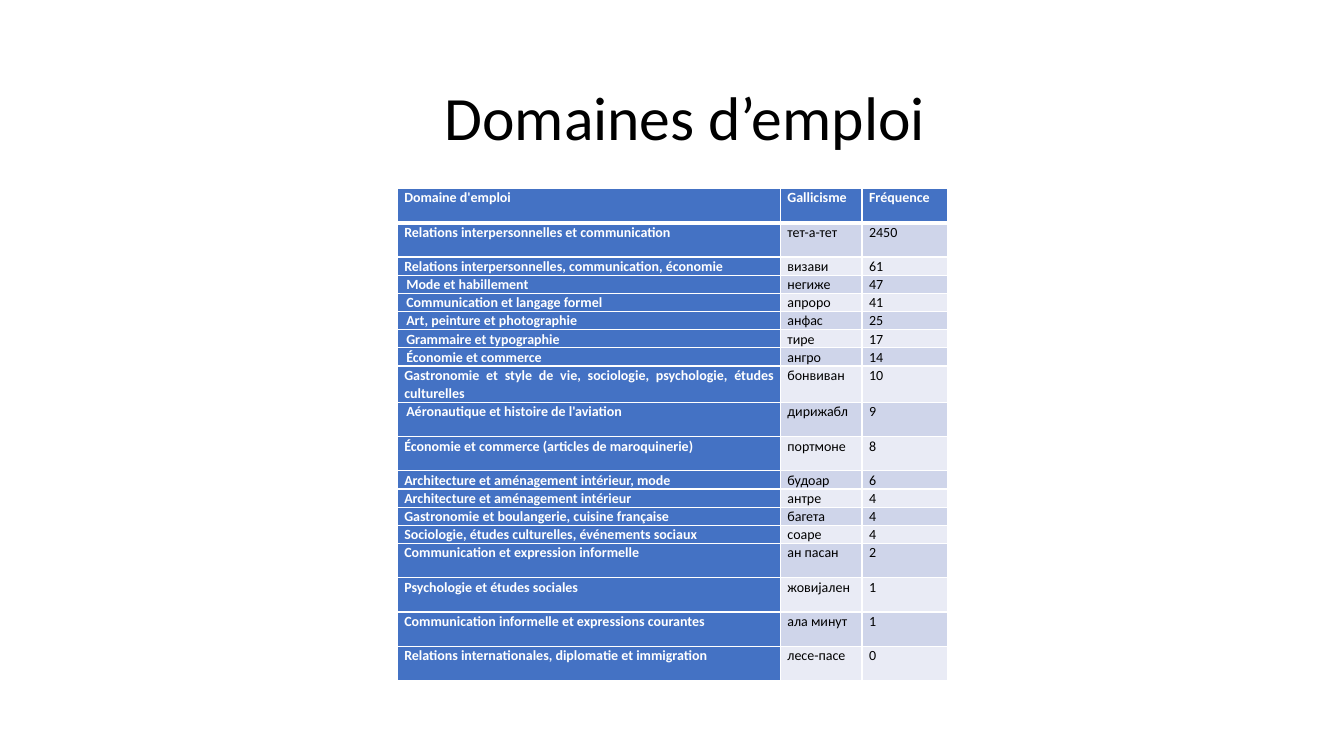
"""Build a slide with a table of Gallicisms, their domains of use and frequency."""
from lxml.etree import SubElement
from pptx import Presentation
from pptx.dml.color import RGBColor
from pptx.enum.text import MSO_ANCHOR, MSO_AUTO_SIZE, PP_ALIGN
from pptx.oxml.ns import qn
from pptx.util import Inches, Pt

WHITE = RGBColor(0xFF, 0xFF, 0xFF)
BLACK = RGBColor(0x00, 0x00, 0x00)
BLUE = RGBColor(0x44, 0x72, 0xC4)
DARK = RGBColor(0xCF, 0xD5, 0xEA)
LIGHT = RGBColor(0xE9, 0xEB, 0xF5)
LOW, TALL = 0.17, 0.34
NUDGE = 0.02

ROWS = [
    ("Domaine d'emploi", "Gallicisme", "Fréquence", TALL, 0),
    ("Relations interpersonnelles et communication", "тет-а-тет", "2450", TALL, 0),
    ("Relations interpersonnelles, communication, économie", "визави", "61", LOW, 0),
    ("Mode et habillement", "негиже", "47", LOW, NUDGE),
    ("Communication et langage formel", "апроpo", "41", LOW, NUDGE),
    ("Art, peinture et photographie", "анфас", "25", LOW, NUDGE),
    ("Grammaire et typographie", "тире", "17", LOW, NUDGE),
    ("Économie et commerce", "ангро", "14", LOW, NUDGE),
    ("Gastronomie et style de vie, sociologie, psychologie, études culturelles",
     "бонвиван", "10", TALL, 0),
    ("Aéronautique et histoire de l'aviation", "дирижабл", "9", TALL, NUDGE),
    ("Économie et commerce (articles de maroquinerie)", "портмоне", "8", TALL, 0),
    ("Architecture et aménagement intérieur, mode", "будоар", "6", LOW, 0),
    ("Architecture et aménagement intérieur", "антре", "4", LOW, 0),
    ("Gastronomie et boulangerie, cuisine française", "багета", "4", LOW, 0),
    ("Sociologie, études culturelles, événements sociaux", "соаре", "4", LOW, 0),
    ("Communication et expression informelle", "ан пасан", "2", TALL, 0),
    ("Psychologie et études sociales", "жовијален", "1", TALL, 0),
    ("Communication informelle et expressions courantes", "ала минут", "1", TALL, 0),
    ("Relations internationales, diplomatie et immigration", "лесe-пасe", "0", TALL, 0),
]


def write(frame, text, size=10, color=BLACK, bold=False, align=PP_ALIGN.JUSTIFY,
          left=0, first=0):
    para = frame.paragraphs[0]
    para.alignment = align
    para.line_spacing = 1.07
    para.space_after = Pt(8)
    props = para._p.get_or_add_pPr()
    props.set("marL", str(Inches(left)))
    props.set("indent", str(Inches(first)))
    run = para.add_run()
    run.text = text
    run.font.name = "Calibri"
    run.font.size = Pt(size)
    run.font.bold = bold
    run.font.color.rgb = color


def border(cell, side, width):
    line = SubElement(cell._tc.get_or_add_tcPr(), qn(f"a:ln{side}"), w=str(Pt(width)))
    fill = SubElement(line, qn("a:solidFill"))
    SubElement(fill, qn("a:srgbClr"), val=str(WHITE))


deck = Presentation()
deck.slide_width, deck.slide_height = Inches(13.33), Inches(7.5)
slide = deck.slides.add_slide(deck.slide_layouts[5])

title = slide.shapes.title
title.left, title.top = Inches(0.92), Inches(0.4)
title.width, title.height = Inches(11.5), Inches(1.45)
title.text_frame.auto_size = MSO_AUTO_SIZE.NONE
title.text_frame.vertical_anchor = MSO_ANCHOR.MIDDLE
write(title.text_frame, "Domaines d’emploi", size=44, align=PP_ALIGN.CENTER,
      left=0.5, first=-0.25)

table = slide.shapes.add_table(len(ROWS), 3, Inches(3.94), Inches(1.87),
                               Inches(5.46), Inches(4.79)).table
for col, width in zip(table.columns, (3.8, 0.81, 0.85)):
    col.width = Inches(width)

for r, (*texts, height, nudge) in enumerate(ROWS):
    table.rows[r].height = Inches(height)
    for c, text in enumerate(texts):
        cell = table.cell(r, c)
        cell.margin_left = cell.margin_right = Inches(0.07)
        cell.margin_top = cell.margin_bottom = 0
        for side in "LRTB":
            border(cell, side, 3 if r == 0 and side == "B" else 1)
        head = r == 0 or c == 0
        cell.fill.solid()
        cell.fill.fore_color.rgb = BLUE if head else DARK if r % 2 else LIGHT
        write(cell.text_frame, text, color=WHITE if head else BLACK, bold=head,
              first=nudge if c == 0 else 0)

deck.save("out.pptx")
